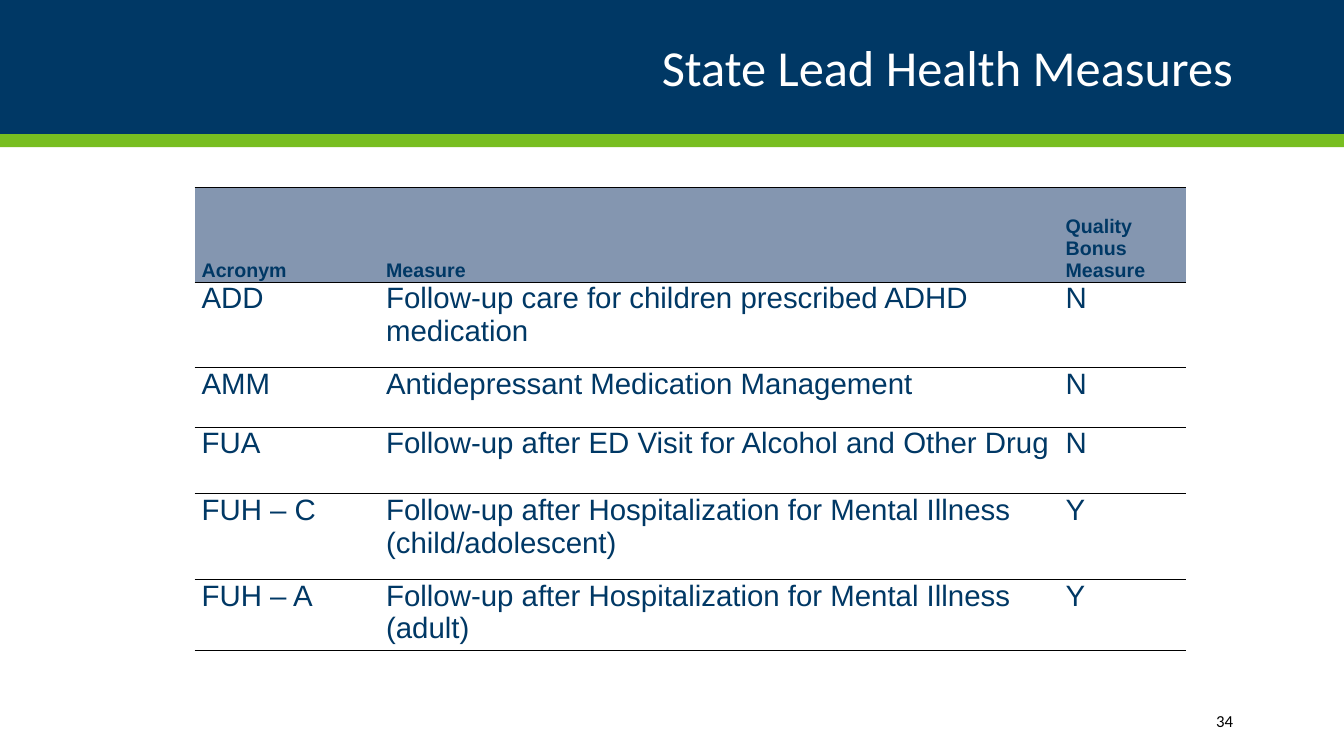
from lxml import etree
from pptx import Presentation
from pptx.dml.color import RGBColor
from pptx.enum.shapes import MSO_SHAPE
from pptx.enum.text import MSO_ANCHOR, PP_ALIGN
from pptx.oxml.ns import qn
from pptx.util import Inches, Pt

RECT = MSO_SHAPE.RECTANGLE
TOP, MIDDLE, BOTTOM = MSO_ANCHOR.TOP, MSO_ANCHOR.MIDDLE, MSO_ANCHOR.BOTTOM
RIGHT = PP_ALIGN.RIGHT

COLORS = {
    "navy": "003865",
    "green": "78BE21",
    "header": "8496B0",
    "white": "FFFFFF",
    "black": "000000",
}
WIDTHS = [1.83, 6.74, 1.26]
HEIGHTS = [0.94, 0.85, 0.59, 0.66, 0.85, 0.7]
ROWS = [
    ("Acronym", "Measure", "Quality Bonus Measure"),
    ("ADD", "Follow-up care for children prescribed ADHD medication", "N"),
    ("AMM", "Antidepressant Medication Management", "N"),
    ("FUA", "Follow-up after ED Visit for Alcohol and Other Drug", "N"),
    ("FUH – C", "Follow-up after Hospitalization for Mental Illness (child/adolescent)", "Y"),
    ("FUH – A", "Follow-up after Hospitalization for Mental Illness (adult)", "Y"),
]


def rgb(name):
    return RGBColor.from_string(COLORS[name])


def style(para, size, font, color, bold=False):
    for run in para.runs:
        run.font.size = Pt(size)
        run.font.name = font
        run.font.bold = bold
        run.font.color.rgb = rgb(color)


def add_band(slide, top, height, color):
    """Add a bar across the full slide width."""
    band = slide.shapes.add_shape(RECT, 0, Inches(top), Inches(13.33), Inches(height))
    band.shadow.inherit = False
    band.fill.solid()
    band.fill.fore_color.rgb = rgb(color)
    band.line.fill.background()


def add_label(slide, text, box, size, color, spacing=1.0):
    """Add a right-aligned line of text, centred in height."""
    frame = slide.shapes.add_textbox(*map(Inches, box)).text_frame
    frame.word_wrap = True
    frame.vertical_anchor = MIDDLE
    para = frame.paragraphs[0]
    para.text = text
    para.alignment = RIGHT
    para.line_spacing = spacing
    style(para, size, "Calibri", color)


def set_borders(cell):
    """Rule the cell above and below, and leave its sides open."""
    props = cell._tc.get_or_add_tcPr()
    for side in "LRTB":
        line = etree.SubElement(props, qn(f"a:ln{side}"), w=str(Pt(1)))
        if side in "LR":
            etree.SubElement(line, qn("a:noFill"))
        else:
            fill = etree.SubElement(line, qn("a:solidFill"))
            etree.SubElement(fill, qn("a:srgbClr"), val=COLORS["black"])


def fill_cell(cell, text, header):
    set_borders(cell)
    if header:
        cell.fill.solid()
        cell.fill.fore_color.rgb = rgb("header")
    else:
        cell.fill.background()
    cell.margin_left = cell.margin_right = Inches(0.07)
    cell.margin_top = cell.margin_bottom = 0
    cell.vertical_anchor = BOTTOM if header else TOP
    para = cell.text_frame.paragraphs[0]
    para.text = text
    para.space_before = para.space_after = Pt(2)
    style(para, 14 if header else 21, "Arial", "navy", header)


def add_measures(slide):
    box = (1.93, 1.86, sum(WIDTHS), sum(HEIGHTS))
    frame = slide.shapes.add_table(len(ROWS), len(WIDTHS), *map(Inches, box))
    table = frame.table
    table.horz_banding = False
    for col, width in zip(table.columns, WIDTHS):
        col.width = Inches(width)
    for r, (row, height) in enumerate(zip(table.rows, HEIGHTS)):
        row.height = Inches(height)
        for cell, text in zip(row.cells, ROWS[r]):
            fill_cell(cell, text, r == 0)


def main():
    deck = Presentation()
    deck.slide_width, deck.slide_height = Inches(13.33), Inches(7.5)
    slide = deck.slides.add_slide(deck.slide_layouts[6])
    add_band(slide, 0, 1.33, "navy")
    add_band(slide, 1.33, 0.13, "green")
    add_label(slide, "State Lead Health Measures", (1, 0.2, 11.33, 1), 36, "white", 0.9)
    add_measures(slide)
    add_label(slide, "34", (10.83, 6.95, 1.5, 0.4), 12, "black")
    deck.save("out.pptx")


if __name__ == "__main__":
    main()
